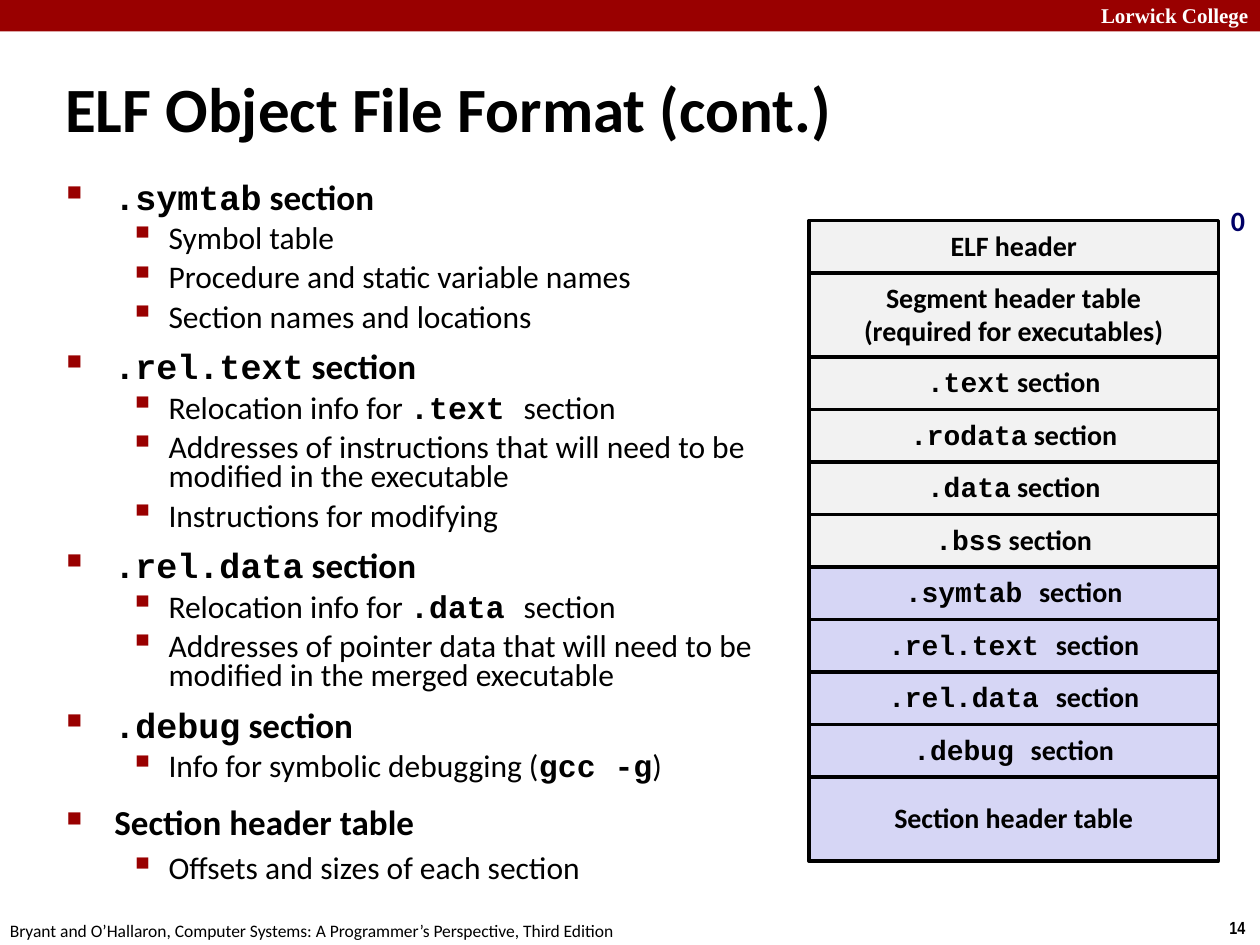
from lxml import etree
from pptx import Presentation
from pptx.dml.color import RGBColor
from pptx.enum.shapes import MSO_SHAPE
from pptx.enum.text import MSO_ANCHOR, PP_ALIGN
from pptx.oxml.ns import qn
from pptx.util import Inches, Pt

RECTANGLE = MSO_SHAPE.RECTANGLE
MIDDLE = MSO_ANCHOR.MIDDLE
CENTER = PP_ALIGN.CENTER

RED = RGBColor(0x99, 0x00, 0x00)
WHITE = RGBColor(0xFF, 0xFF, 0xFF)
BLACK = RGBColor(0x00, 0x00, 0x00)
NAVY = RGBColor(0x00, 0x00, 0x66)
GRAY = RGBColor(0xF2, 0xF2, 0xF2)
LAVENDER = RGBColor(0xD6, 0xD6, 0xF5)

BODY_FONT = "Calibri"
CODE_FONT = "Courier New"

BULLETS = [
    {"size": 20, "bold": True, "margin": 0.38, "hanging": 0.38,
     "before": 12.5, "spacing": 0.71, "character": "■", "percent": 60},
    {"size": 18, "bold": False, "margin": 0.81, "hanging": 0.31,
     "before": 5.6, "spacing": 0.78, "character": "▪", "percent": 110},
]
LOOSE_SPACING = 0.88

OUTLINE = [
    ([".symtab", " section"],
     [["Symbol table"],
      ["Procedure and static variable names"],
      ["Section names and locations"]]),
    ([".rel.text", " section"],
     [["Relocation info for ", ".text ", "section"],
      ["Addresses of instructions that will need to be modified in the executable"],
      ["Instructions for modifying"]]),
    ([".rel.data", " section"],
     [["Relocation info for ", ".data ", "section"],
      ["Addresses of pointer data that will need to be modified in the merged executable"]]),
    ([".debug", " section"],
     [["Info for symbolic debugging (", "gcc -g", ")"]]),
    (["Section header table"],
     [["Offsets and sizes of each section"]]),
]

ROW_HEIGHT = 5 / 12
TALL_HEIGHT = 2 / 3
FILE_LEFT, FILE_TOP, FILE_WIDTH = 6.42, 1.75, 3.25

FILE_SECTIONS = [
    ([["ELF header"]], ROW_HEIGHT, GRAY),
    ([["Segment header table"], ["(required for executables)"]], TALL_HEIGHT, GRAY),
    *[([[name, " section"]], ROW_HEIGHT, GRAY)
      for name in (".text", ".rodata", ".data", ".bss")],
    *[([[name + " ", "section"]], ROW_HEIGHT, LAVENDER)
      for name in (".symtab", ".rel.text", ".rel.data", ".debug")],
    ([["Section header table"]], TALL_HEIGHT, LAVENDER),
]


def is_code(text):
    return text.startswith((".", "gcc"))


def add_run(paragraph, text, size, bold=False, font=BODY_FONT, color=BLACK):
    run = paragraph.add_run()
    run.text = text
    run.font.name = font
    run.font.size = Pt(size)
    run.font.bold = bold
    run.font.color.rgb = color


def add_mixed_runs(paragraph, texts, size, bold):
    for text in texts:
        code = is_code(text)
        add_run(paragraph, text, size, bold or code, CODE_FONT if code else BODY_FONT)


def add_text_box(slide, left, top, width, height, wrap=True):
    box = slide.shapes.add_textbox(Inches(left), Inches(top), Inches(width), Inches(height))
    box.text_frame.word_wrap = wrap
    return box.text_frame


def add_label(slide, box, text, size, wrap=False, **style):
    frame = add_text_box(slide, *box, wrap)
    add_run(frame.paragraphs[0], text, size, **style)
    return frame


def add_rectangle(slide, left, top, width, height, fill):
    shape = slide.shapes.add_shape(
        RECTANGLE, Inches(left), Inches(top), Inches(width), Inches(height))
    shape.shadow.inherit = False
    shape.fill.solid()
    shape.fill.fore_color.rgb = fill
    shape.line.fill.background()
    return shape


def next_paragraph(frame):
    first = frame.paragraphs[0]
    return frame.add_paragraph() if first.runs else first


def set_bullet(paragraph, style):
    properties = paragraph._p.get_or_add_pPr()
    properties.set("marL", str(Inches(style["margin"])))
    properties.set("indent", str(-Inches(style["hanging"])))
    color = etree.SubElement(properties, qn("a:buClr"))
    etree.SubElement(color, qn("a:srgbClr"), val=str(RED))
    etree.SubElement(properties, qn("a:buSzPct"), val=str(style["percent"] * 1000))
    etree.SubElement(properties, qn("a:buChar"), char=style["character"])


def add_bullet(frame, level, texts, spacing):
    style = BULLETS[level]
    paragraph = next_paragraph(frame)
    paragraph.level = level
    paragraph.line_spacing = spacing or style["spacing"]
    paragraph.space_before = Pt(style["before"])
    set_bullet(paragraph, style)
    add_mixed_runs(paragraph, texts, style["size"], style["bold"])


def add_outline(slide):
    frame = add_text_box(slide, 0.43, 1.43, 5.77, 5.98)
    for heading, items in OUTLINE:
        spacing = None if is_code(heading[0]) else LOOSE_SPACING
        add_bullet(frame, 0, heading, spacing)
        for item in items:
            add_bullet(frame, 1, item, spacing)


def add_file_section(slide, top, height, lines, fill):
    shape = add_rectangle(slide, FILE_LEFT, top, FILE_WIDTH, height, fill)
    shape.line.color.rgb = BLACK
    shape.line.width = Pt(2)
    frame = shape.text_frame
    frame.word_wrap = False
    frame.vertical_anchor = MIDDLE
    for texts in lines:
        paragraph = next_paragraph(frame)
        paragraph.alignment = CENTER
        paragraph.line_spacing = 0.94 if is_code(texts[0]) else 0.98
        add_mixed_runs(paragraph, texts, 16, True)


def add_file_layout(slide):
    top = FILE_TOP
    for lines, height, fill in FILE_SECTIONS:
        add_file_section(slide, top, height, lines, fill)
        top += height
    offset = add_label(slide, (9.67, 1.58, 0.31, 0.37), "0", 16, bold=True, color=NAVY)
    offset.paragraphs[0].line_spacing = 0.98


def add_page_frame(slide):
    add_rectangle(slide, 0, 0, 10, 0.25, RED)
    add_label(slide, (8.64, -0.03, 1.43, 0.3), "Lorwick College", 12,
              bold=True, font="Times New Roman", color=WHITE)
    add_label(slide, (9.66, 7.23, 0.34, 0.27), "14", 10, bold=True, font="Arial Narrow")
    add_label(slide, (-0.02, 7.25, 5.08, 0.27),
              "Bryant and O’Hallaron, Computer Systems: A Programmer’s Perspective, Third Edition", 10)


def main():
    presentation = Presentation()
    presentation.slide_width = Inches(10)
    presentation.slide_height = Inches(7.5)
    slide = presentation.slides.add_slide(presentation.slide_layouts[6])
    add_page_frame(slide)
    title = add_label(slide, (0.42, 0.42, 9.53, 0.86),
                      "ELF Object File Format (cont.)", 36, wrap=True, bold=True)
    title.vertical_anchor = MIDDLE
    add_outline(slide)
    add_file_layout(slide)
    presentation.save("out.pptx")


if __name__ == "__main__":
    main()
